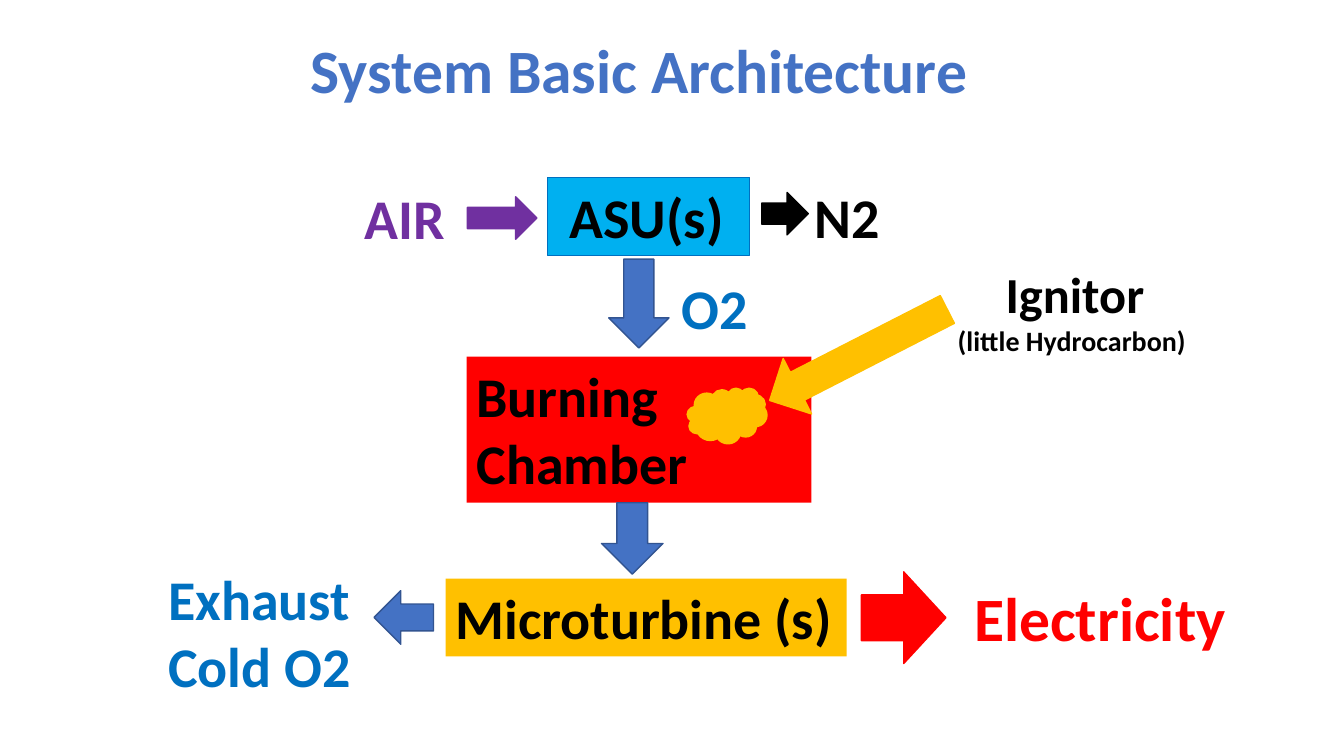
"""Build the System Basic Architecture slide."""
from pptx import Presentation
from pptx.dml.color import RGBColor
from pptx.enum.shapes import MSO_SHAPE
from pptx.enum.text import MSO_ANCHOR, PP_ALIGN
from pptx.util import Cm, Pt

BLACK = RGBColor(0x00, 0x00, 0x00)
RED = RGBColor(0xFF, 0x00, 0x00)
GOLD = RGBColor(0xFF, 0xC0, 0x00)
PURPLE = RGBColor(0x70, 0x30, 0xA0)
SKY = RGBColor(0x00, 0xB0, 0xF0)
OXYGEN_BLUE = RGBColor(0x00, 0x70, 0xC0)
FLOW_BLUE = RGBColor(0x44, 0x72, 0xC4)
FLOW_OUTLINE = RGBColor(0x32, 0x54, 0x91)


def write_text(frame, text, size=40, color=BLACK, align=PP_ALIGN.LEFT,
               wrap=True, anchor=MSO_ANCHOR.TOP, spacing=None, last_size=None):
    """Fill a text frame with bold Calibri, one paragraph per line."""
    frame.word_wrap = wrap
    frame.vertical_anchor = anchor
    frame.text = text
    for paragraph in frame.paragraphs:
        paragraph.alignment = align
        paragraph.line_spacing = spacing
        for run in paragraph.runs:
            run.font.name = "Calibri"
            run.font.size = Pt(size)
            run.font.bold = True
            run.font.color.rgb = color
    if last_size:
        frame.paragraphs[-1].runs[0].font.size = Pt(last_size)


def add_title(slide, text):
    """Move and format the title placeholder."""
    title = slide.shapes.title
    title.left, title.top = Cm(0.53), Cm(0.81)
    title.width, title.height = Cm(31.52), Cm(2.01)
    write_text(title.text_frame, text, size=44, color=FLOW_BLUE,
               align=PP_ALIGN.CENTER, anchor=MSO_ANCHOR.BOTTOM, spacing=0.9)


def add_label(slide, text, bounds, **text_format):
    """Add a text box at left, top, width, height in centimetres."""
    label = slide.shapes.add_textbox(*map(Cm, bounds))
    write_text(label.text_frame, text, **text_format)


def add_figure(slide, kind, bounds, fill, outline=None, line_width=1, rotation=0):
    """Add a filled preset shape, outlined when a line colour is given."""
    shape = slide.shapes.add_shape(kind, *map(Cm, bounds))
    shape.shadow.inherit = False
    shape.rotation = rotation
    shape.fill.solid()
    shape.fill.fore_color.rgb = fill
    if outline is None:
        shape.line.fill.background()
    else:
        shape.line.color.rgb = outline
        shape.line.width = Pt(line_width)
    return shape


def add_stage(slide, text, bounds, fill, outline=None, wrap=True):
    """Add a process box with its name."""
    stage = add_figure(slide, MSO_SHAPE.RECTANGLE, bounds, fill, outline, 0.75)
    write_text(stage.text_frame, text, wrap=wrap)


def main():
    """Create the slide and save it."""
    presentation = Presentation()
    presentation.slide_width, presentation.slide_height = Cm(33.87), Cm(19.05)
    slide = presentation.slides.add_slide(presentation.slide_layouts[5])
    add_title(slide, "System Basic Architecture ")

    add_stage(slide, " ASU(s)", (13.79, 4.47, 5.11, 1.96), SKY, OXYGEN_BLUE)
    add_stage(slide, "Burning\nChamber", (11.76, 8.99, 8.69, 3.68), RED)
    add_stage(slide, "Microturbine (s)", (11.23, 14.58, 10.11, 1.96), GOLD, wrap=False)

    up, down = MSO_SHAPE.UP_ARROW, MSO_SHAPE.DOWN_ARROW
    for kind, bounds, fill, outline, rotation in (
        (up, (12.12, 4.62, 1.07, 1.75), PURPLE, PURPLE, 90),
        (up, (19.25, 4.8, 1.07, 1.17), BLACK, BLACK, 90),
        (down, (15.34, 6.53, 1.52, 2.24), FLOW_BLUE, FLOW_OUTLINE, 0),
        (down, (20.85, 6.43, 1.57, 5.03), GOLD, GOLD, 62.9),
        (down, (15.16, 12.67, 1.55, 1.8), FLOW_BLUE, FLOW_OUTLINE, 0),
        (down, (9.5, 14.81, 1.35, 1.5), FLOW_BLUE, FLOW_OUTLINE, 90),
        (down, (21.62, 14.5, 2.31, 2.13), RED, RED, 270),
    ):
        add_figure(slide, kind, bounds, fill, outline, rotation=rotation)
    add_figure(slide, MSO_SHAPE.CLOUD, (17.32, 9.78, 2.01, 1.4), GOLD, GOLD)

    add_label(slide, "AIR", (8.94, 4.5, 2.57, 1.96), color=PURPLE, wrap=False)
    add_label(slide, "N2", (20.27, 4.47, 2.16, 1.96), wrap=False)
    add_label(slide, "O2", (16.92, 6.78, 2.18, 1.96), color=OXYGEN_BLUE, wrap=False)
    add_label(slide, "Ignitor\n(little Hydrocarbon) ", (23.85, 6.5, 6.48, 2.64),
              size=36, last_size=20, align=PP_ALIGN.CENTER, wrap=False)
    add_label(slide, "Exhaust\nCold O2", (3.99, 14.1, 5.16, 3.68),
              color=OXYGEN_BLUE, wrap=False)
    add_label(slide, "Electricity ", (24.23, 14.48, 6.99, 2.13),
              size=44, color=RED, align=PP_ALIGN.CENTER)
    presentation.save("out.pptx")


if __name__ == "__main__":
    main()
